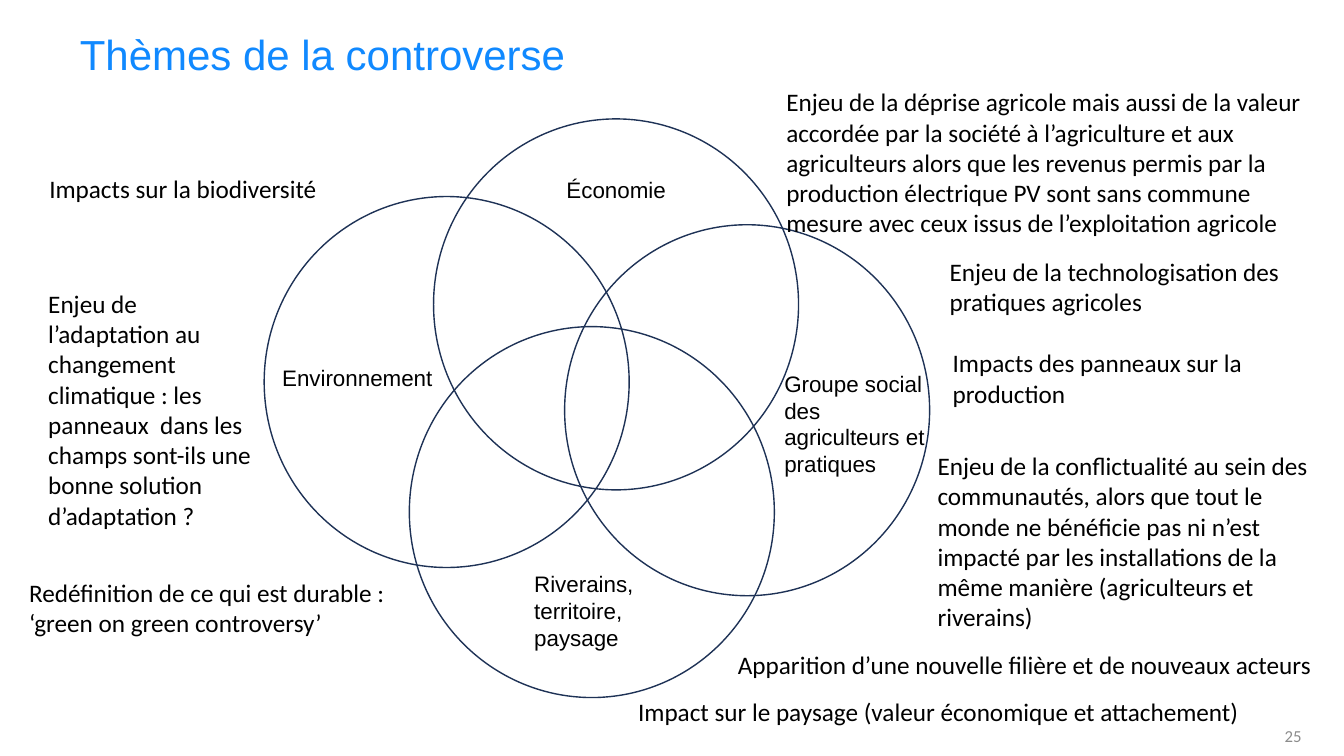
from pptx import Presentation
from pptx.dml.color import RGBColor
from pptx.enum.shapes import MSO_SHAPE
from pptx.enum.text import MSO_ANCHOR, MSO_AUTO_SIZE, PP_ALIGN
from pptx.util import Pt

PX = 9144  # 100 px to the inch
SLIDE_WIDTH, SLIDE_HEIGHT = 1333, 750

TITLE_BLUE = RGBColor(0x10, 0x89, 0xFF)
CIRCLE_NAVY = RGBColor(0x1E, 0x32, 0x56)
BLACK = RGBColor(0x00, 0x00, 0x00)
PAGE_GREY = RGBColor(0x8C, 0x8C, 0x8C)

CIRCLE_SIZE = (362, 368)

# Theme: circle offset, label box, label (all relative to the diagram)
THEMES = [
    ((0, 77), (8, 238, 215, 37), "Environnement"),
    ((144, 206), (258, 443, 176, 91), "Riverains, territoire, paysage"),
    ((298, 105), (506, 244, 165, 118),
     "Groupe social des agriculteurs et pratiques"),
    ((168, 0), (290, 52, 182, 37), "Économie"),
]

# Issues: box relative to the column, wording
LEFT_ISSUES = [
    ((20, 0, 332, 40), "Impacts sur la biodiversité"),
    ((19, 114, 229, 252),
     "Enjeu de l’adaptation au changement climatique : les panneaux  dans "
     "les champs sont-ils une bonne solution d’adaptation ?"),
    ((0, 401, 395, 71),
     "Redéfinition de ce qui est durable : ‘green on green controversy’"),
]
RIGHT_ISSUES = [
    ((147, 0, 551, 162),
     "Enjeu de la déprise agricole mais aussi de la valeur accordée par la "
     "société à l’agriculture et aux agriculteurs alors que les revenus "
     "permis par la production électrique PV sont sans commune mesure avec "
     "ceux issus de l’exploitation agricole"),
    ((309, 168, 399, 71),
     "Enjeu de la technologisation des pratiques agricoles"),
    ((312, 259, 399, 71), "Impacts des panneaux sur la production"),
    ((297, 361, 399, 191),
     "Enjeu de la conflictualité au sein des communautés, alors que tout le "
     "monde ne bénéficie pas ni n’est impacté par les installations de la "
     "même manière (agriculteurs et riverains)"),
    ((99, 558, 615, 40),
     "Apparition d’une nouvelle filière et de nouveaux acteurs"),
    ((0, 605, 638, 40),
     "Impact sur le paysage (valeur économique et attachement)"),
]


def emu(*lengths):
    return [length * PX for length in lengths]


def within(origin, box):
    """Shift a box by the origin of the region that holds it."""
    return origin[0] + box[0], origin[1] + box[1], box[2], box[3]


def add_text(shapes, text, box, *, size=18, font="Calibri", color=BLACK,
             align=None, anchor=MSO_ANCHOR.TOP, grow=True,
             line_spacing=None, side_margins=(10, 10)):
    text_box = shapes.add_textbox(*emu(*box))
    frame = text_box.text_frame
    frame.word_wrap = True
    frame.auto_size = (MSO_AUTO_SIZE.SHAPE_TO_FIT_TEXT if grow
                       else MSO_AUTO_SIZE.NONE)
    frame.vertical_anchor = anchor
    frame.margin_left, frame.margin_right = emu(*side_margins)
    frame.margin_top, frame.margin_bottom = emu(5, 5)
    paragraph = frame.paragraphs[0]
    paragraph.alignment = align
    paragraph.line_spacing = line_spacing
    run = paragraph.add_run()
    run.text = text
    run.font.size = Pt(size)
    run.font.name = font
    run.font.color.rgb = color


def add_title(slide, box):
    add_text(slide.shapes, "Thèmes de la controverse", box, size=30,
             font="Arial", color=TITLE_BLUE, align=PP_ALIGN.CENTER,
             anchor=MSO_ANCHOR.MIDDLE, grow=False, line_spacing=0.9,
             side_margins=(39, 59))


def add_venn_diagram(slide, origin):
    diagram = slide.shapes.add_group_shape().shapes
    # Overlapping circles
    for offset, _, _ in THEMES:
        circle = diagram.add_shape(
            MSO_SHAPE.OVAL, *emu(*within(origin, offset + CIRCLE_SIZE)))
        circle.fill.background()
        circle.line.color.rgb = CIRCLE_NAVY
        circle.line.width = Pt(1)
        circle.shadow.inherit = False
    # Theme labels
    for _, label_box, label in THEMES:
        add_text(diagram, label, within(origin, label_box),
                 size=16, font="Arial")


def add_issues(slide, origin, issues):
    for box, issue in issues:
        add_text(slide.shapes, issue, within(origin, box))


def add_page_number(slide, box):
    add_text(slide.shapes, "25", box, size=12, color=PAGE_GREY,
             align=PP_ALIGN.RIGHT, anchor=MSO_ANCHOR.MIDDLE, grow=False)


def main():
    presentation = Presentation()
    presentation.slide_width, presentation.slide_height = emu(
        SLIDE_WIDTH, SLIDE_HEIGHT)
    slide = presentation.slides.add_slide(presentation.slide_layouts[6])
    add_title(slide, (-175, -19, 1010, 150))
    add_venn_diagram(slide, (262, 118))
    add_issues(slide, (19, 167), LEFT_ISSUES)
    add_issues(slide, (623, 81), RIGHT_ISSUES)
    add_page_number(slide, (1001, 710, 300, 40))
    presentation.save("out.pptx")


if __name__ == "__main__":
    main()
